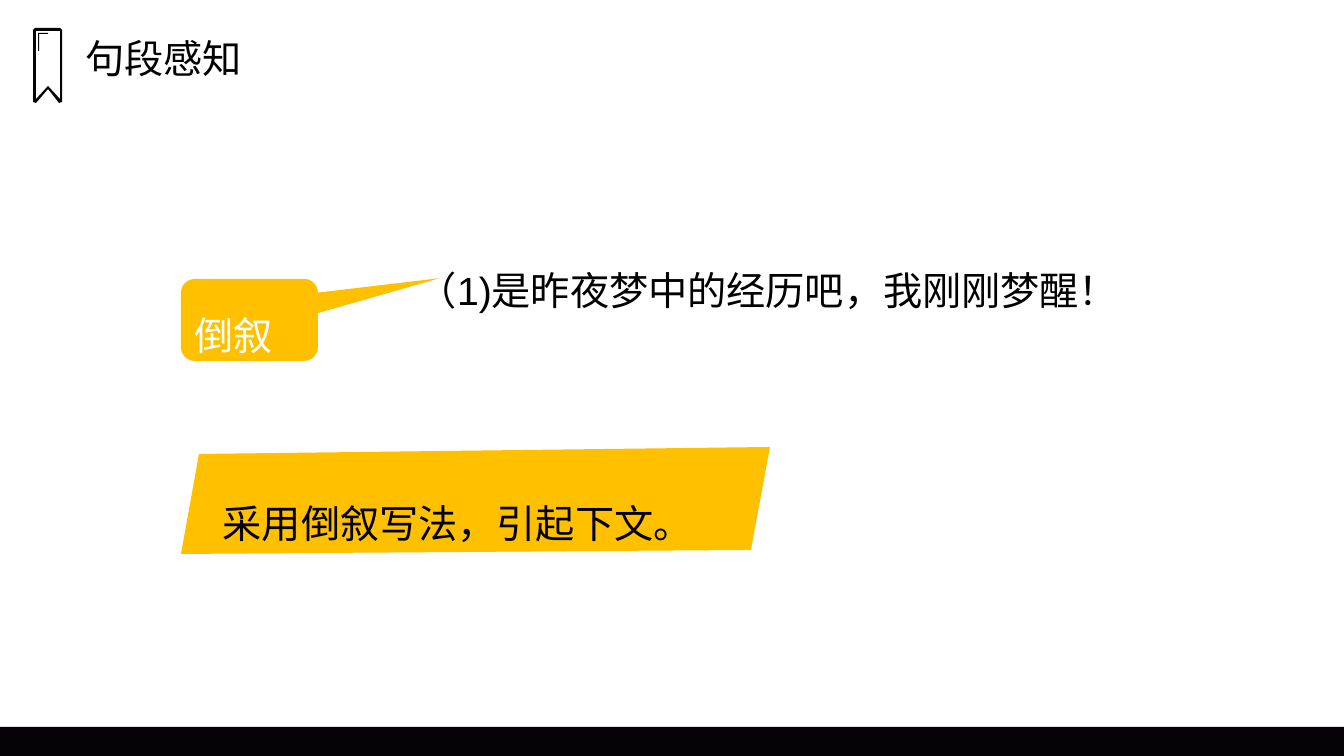
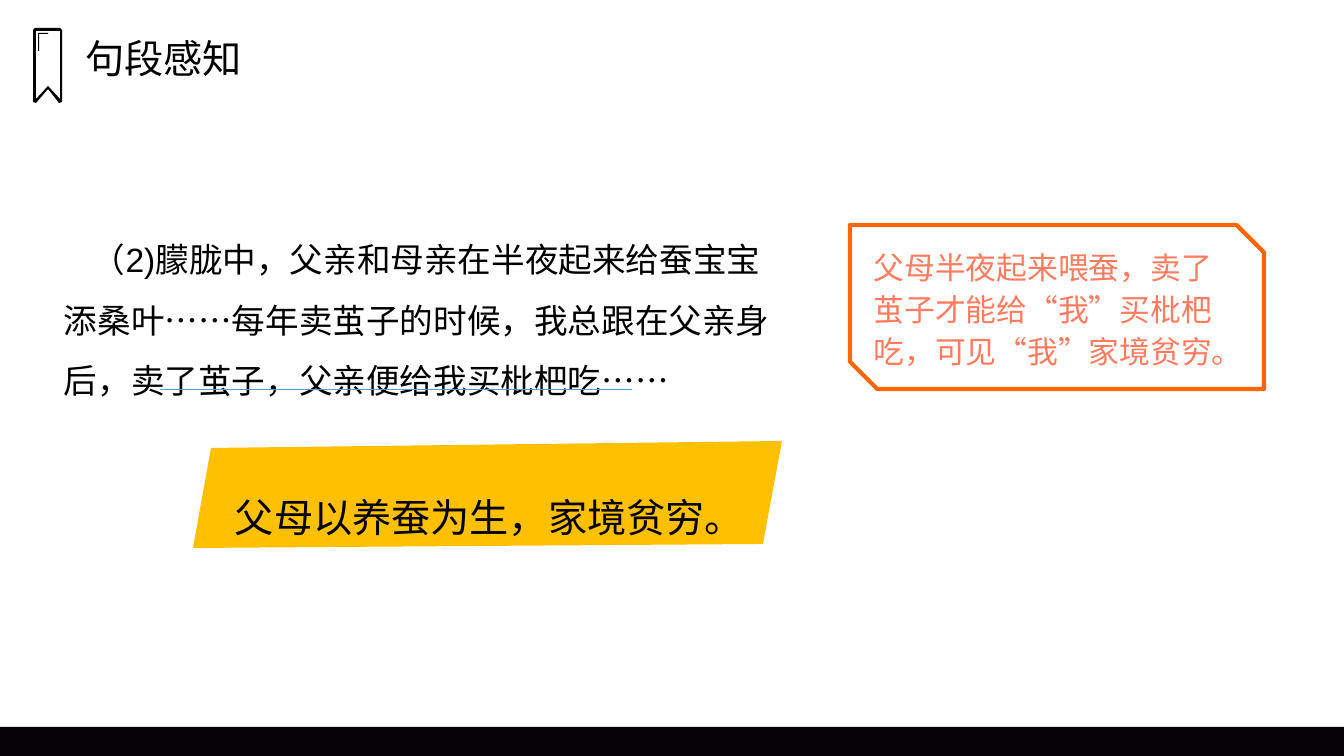
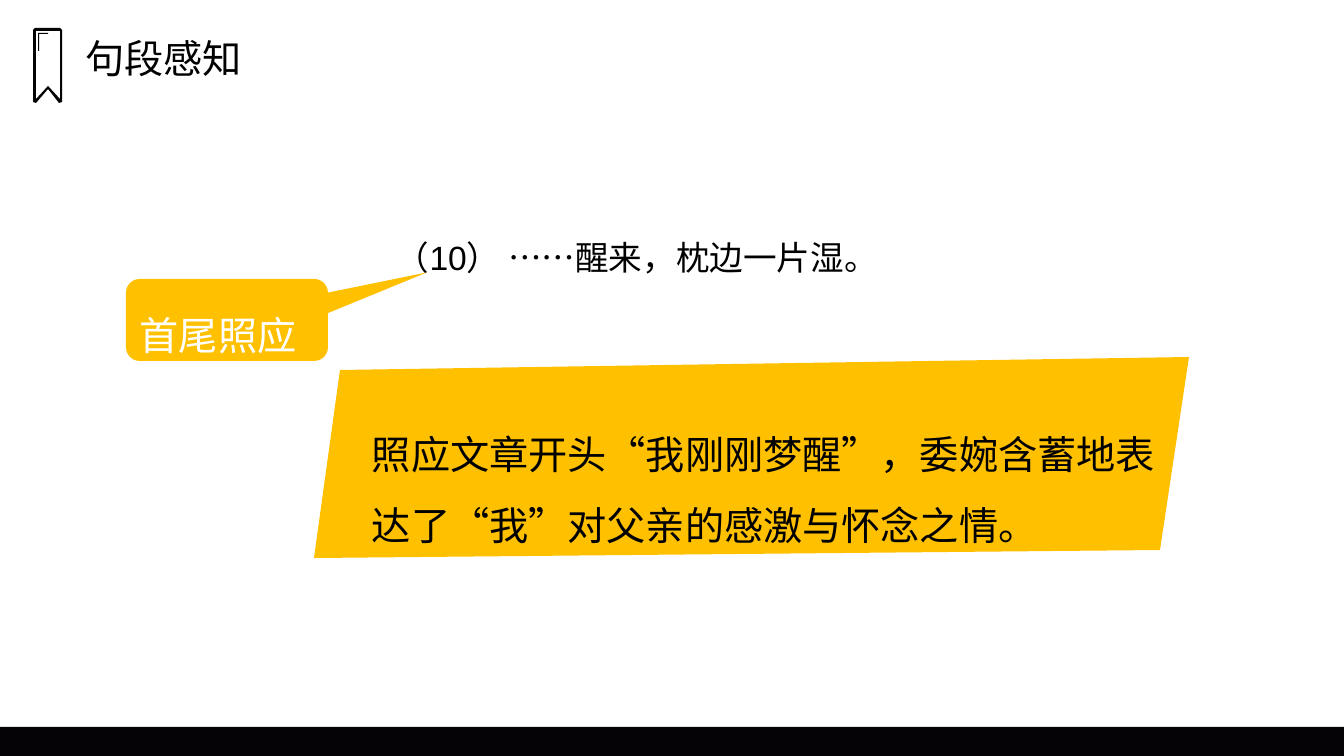
import pptx
import pptx.dml.color
import pptx.enum.shapes
import pptx.enum.text
import pptx.oxml.ns
import pptx.util
from lxml import etree

SHAPE = pptx.enum.shapes.MSO_SHAPE
ALIGN = pptx.enum.text.PP_ALIGN
ANCHOR = pptx.enum.text.MSO_ANCHOR
AUTOSIZE = pptx.enum.text.MSO_AUTO_SIZE
Pt = pptx.util.Pt

# Shared look
SCALE = 914400 / 100.8
WIDTH, HEIGHT = 1344, 756
BLACK, WHITE, INK, AMBER = "000000", "FFFFFF", "050305", "FFC000"
ORANGE, CORAL, BLUE = "FF6600", "FF7C61", "5B9BD5"
FONT = "Arial"
TITLE_BOX = (75, 29, 178, 57)
FOOTER_BAND = (0, 727, WIDTH, 29)
BOOKMARK = [
    [(35, 28), (33, 30), (33, 102), (36, 103), (48, 89), (59, 103),
     (62, 102), (62, 30), (60, 28)],
    [(36, 31), (60, 31), (60, 99), (48, 86), (36, 99)],
    [(38, 33), (48, 33), (48, 34), (39, 34), (39, 51), (38, 51)],
]

# Banner outlines and text areas, measured from the banner's top left corner
SHORT_BANNER = {"outline": [(589, 0), (570, 103), (0, 107), (18, 7)],
                "text_box": (32, 24, 504, 74)}
LONG_BANNER = {"outline": [(875, 0), (846, 193), (0, 201), (26, 13)],
               "text_box": (48, 45, 816, 145)}

# Content
TITLE = "句段感知"
SLIDES = [
    {
        "quote": {"text": "（1)是昨夜梦中的经历吧，我刚刚梦醒！",
                  "box": (408, 238, 840, 74), "size": 28},
        "banner": {"text": "采用倒叙写法，引起下文。", "at": (181, 447), **SHORT_BANNER},
        "callout": {"text": "倒叙", "box": (181, 279, 137, 82),
                    "tip": (1.39, -0.51)},
    },
    {
        "quote": {"text": "（2)朦胧中，父亲和母亲在半夜起来给蚕宝宝添桑叶……"
                          "每年卖茧子的时候，我总跟在父亲身后，卖了茧子，"
                          "父亲便给我买枇杷吃……",
                  "box": (54, 214, 727, 187), "size": 24, "indent": 28},
        "underline": (160, 389, 632, 389),
        "remark": {"text": "父母半夜起来喂蚕，卖了茧子才能给“我”买枇杷吃，"
                           "可见“我”家境贫穷。",
                   "box": (850, 225, 414, 164)},
        "banner": {"text": "父母以养蚕为生，家境贫穷。", "at": (193, 441), **SHORT_BANNER},
    },
    {
        "quote": {"text": "（10） ……醒来，枕边一片湿。",
                  "box": (358, 212, 840, 64), "size": 24, "indent": 28},
        "banner": {"text": "照应文章开头“我刚刚梦醒”，委婉含蓄地表达了“我”"
                           "对父亲的感激与怀念之情。",
                   "at": (314, 357), **LONG_BANNER},
        "callout": {"text": "首尾照应", "box": (126, 279, 202, 82),
                    "tip": (0.99, -0.58)},
    },
]


def px(*lengths):
    return [round(length * SCALE) for length in lengths]


def color(value):
    return pptx.dml.color.RGBColor.from_string(value)


def apply(target, formats):
    for name, value in formats.items():
        setattr(target, name, value)


def write(shape, text, size, ink=BLACK, spacing=1.5, indent=0, wrap=True,
          autosize=AUTOSIZE.SHAPE_TO_FIT_TEXT):
    frame = shape.text_frame
    frame.text = text
    apply(frame, {"word_wrap": wrap, "auto_size": autosize,
                  "vertical_anchor": ANCHOR.TOP})
    paragraph = frame.paragraphs[0]
    apply(paragraph, {"alignment": ALIGN.LEFT, "line_spacing": spacing})
    if indent:
        paragraph._p.get_or_add_pPr().set("indent", str(px(indent)[0]))
    font = paragraph.runs[0].font
    apply(font, {"name": FONT, "size": Pt(size)})
    font.color.rgb = color(ink)


def paint(shape, fill=None, line=None, width=1):
    shape.shadow.inherit = False
    if fill:
        shape.fill.solid()
        shape.fill.fore_color.rgb = color(fill)
    else:
        shape.fill.background()
    if line:
        shape.line.color.rgb = color(line)
        shape.line.width = Pt(width)
    else:
        shape.line.fill.background()
    return shape


def add_outline(shapes, contours, fill):
    builder = shapes.build_freeform(*contours[0][0], scale=SCALE)
    for number, contour in enumerate(contours):
        if number:
            builder.move_to(*contour[0])
        builder.add_line_segments(contour[1:], close=True)
    return paint(builder.convert_to_shape(), fill)


def decorate_layout(layout, slide):
    """Build the band and bookmark, then keep them on the layout."""
    band = slide.shapes.add_shape(SHAPE.RECTANGLE, *px(*FOOTER_BAND))
    bookmark = add_outline(slide.shapes, BOOKMARK, INK)
    for position, part in enumerate((paint(band, INK), bookmark), start=2):
        layout.shapes.element.insert(position, part.element)


def add_title(slide):
    title = slide.shapes.title
    apply(title, dict(zip(("left", "top", "width", "height"), px(*TITLE_BOX))))
    write(title, TITLE, 28, spacing=1.0, wrap=False, autosize=AUTOSIZE.NONE)


def add_quote(slide, text, box, size, indent=0):
    write(slide.shapes.add_textbox(*px(*box)), text, size, indent=indent)


def add_underline(slide, ends):
    rule = slide.shapes.add_connector(
        pptx.enum.shapes.MSO_CONNECTOR.STRAIGHT, *px(*ends))
    rule.line.color.rgb = color(BLUE)
    rule.line.width = Pt(0.5)
    etree.SubElement(rule.element.spPr, pptx.oxml.ns.qn("a:effectLst"))


def add_remark(slide, text, box):
    remark = slide.shapes.add_shape(SHAPE.SNIP_2_DIAG_RECTANGLE, *px(*box))
    write(paint(remark, line=ORANGE, width=3), text, 22, CORAL, spacing=Pt(30))


def add_banner(slide, text, at, outline, text_box):
    left, top = at
    group = slide.shapes.add_group_shape()
    add_outline(group.shapes, [[(left + x, top + y) for x, y in outline]], AMBER)
    x, y, width, height = text_box
    write(group.shapes.add_textbox(*px(left + x, top + y, width, height)), text, 28)


def add_callout(slide, text, box, tip):
    callout = slide.shapes.add_shape(SHAPE.ROUNDED_RECTANGULAR_CALLOUT, *px(*box))
    for number, value in enumerate(tip):
        callout.adjustments[number] = value
    write(paint(callout, AMBER), text, 28, WHITE)


def main():
    deck = pptx.Presentation()
    deck.slide_width, deck.slide_height = px(WIDTH, HEIGHT)
    layout = deck.slide_layouts[5]
    for number, content in enumerate(SLIDES):
        slide = deck.slides.add_slide(layout)
        if number == 0:
            decorate_layout(layout, slide)
        add_title(slide)
        add_quote(slide, **content["quote"])
        if "underline" in content:
            add_underline(slide, content["underline"])
        if "remark" in content:
            add_remark(slide, **content["remark"])
        add_banner(slide, **content["banner"])
        if "callout" in content:
            add_callout(slide, **content["callout"])
    deck.save("out.pptx")


if __name__ == "__main__":
    main()
